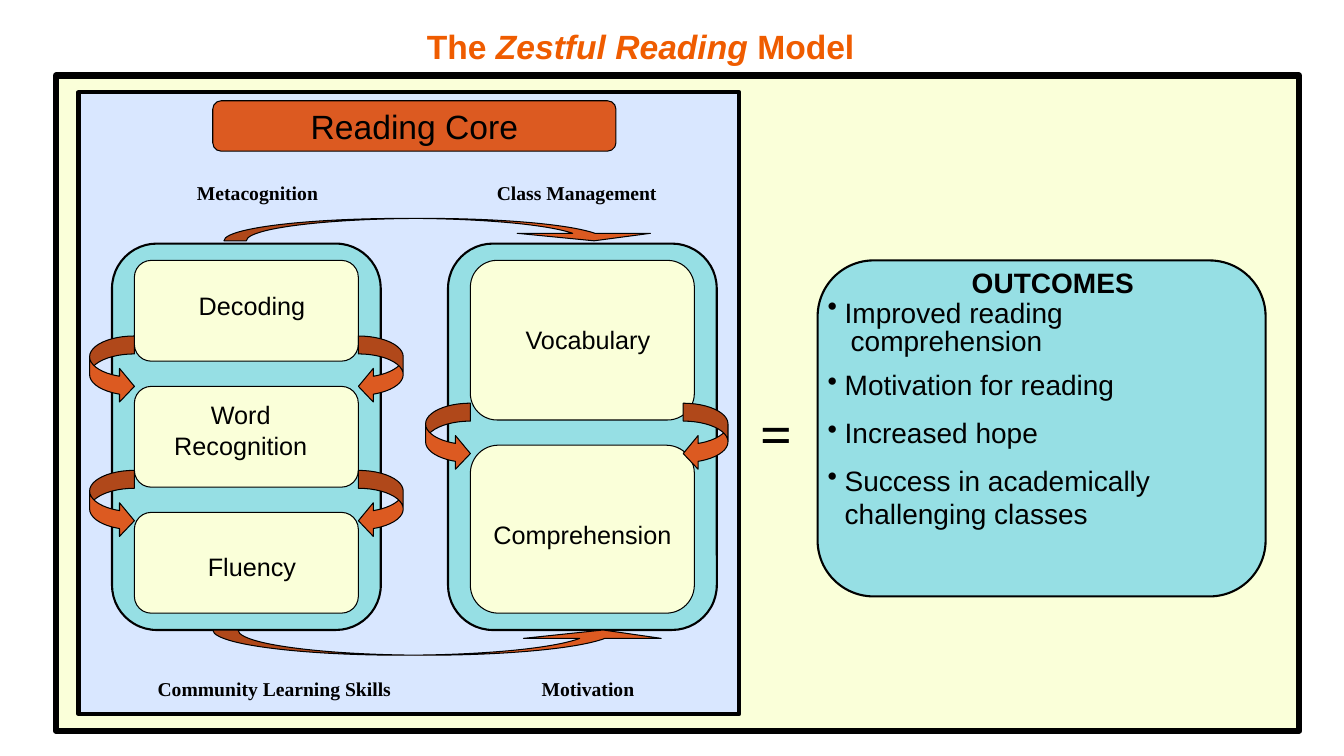
"""Draw the reading model slide on a grid of 120 columns by 90 rows."""
import lxml.etree
import pptx
import pptx.dml.color
import pptx.enum.shapes
import pptx.enum.text
import pptx.oxml.ns
import pptx.util

HUES = {"black": "000000", "cream": "FAFFD9", "sky": "D9E7FF",
        "teal": "96DFE4", "rust": "DC5A21", "flame": "EF5C00"}
KIND = pptx.enum.shapes.MSO_SHAPE
ALIGN = pptx.enum.text.PP_ALIGN
ANCHOR = pptx.enum.text.MSO_ANCHOR


class Board:
    def __init__(self, deck):
        self.slide = deck.slides.add_slide(deck.slide_layouts[6])
        self.col = deck.slide_width / 120
        self.row = deck.slide_height / 90

    def place(self, x, y, w, h):
        return [round(v) for v in (x * self.col, y * self.row, w * self.col, h * self.row)]

    def hue(self, name):
        return pptx.dml.color.RGBColor.from_string(HUES[name])

    def shape(self, kind, area, fill, line=0.75, bends=()):
        item = self.slide.shapes.add_shape(kind, *self.place(*area))
        item.shadow.inherit = False
        item.fill.solid()
        item.fill.fore_color.rgb = self.hue(fill)
        item.line.color.rgb = self.hue("black")
        item.line.width = pptx.util.Pt(line)
        for spot, bend in enumerate(bends):
            item.adjustments[spot] = bend

    def panel(self, area, fill, line=0.75):
        self.shape(KIND.ROUNDED_RECTANGLE, area, fill, line, [0.167])

    def frame(self, area, anchor=ANCHOR.TOP):
        frame = self.slide.shapes.add_textbox(*self.place(*area)).text_frame
        frame.word_wrap = True
        frame.vertical_anchor = anchor
        return frame

    def style(self, para, size, face="Arial", bold=False, hue="black", align=ALIGN.CENTER):
        para.alignment = align
        para.font.size = pptx.util.Pt(size)
        para.font.name = face
        para.font.bold = bold
        para.font.color.rgb = self.hue(hue)

    def text(self, area, words, size, **look):
        para = self.frame(area).paragraphs[0]
        para.text = words
        self.style(para, size, **look)

    def title(self, area, parts):
        para = self.frame(area, ANCHOR.MIDDLE).paragraphs[0]
        for words, slant in parts:
            run = para.add_run()
            run.text = words
            run.font.italic = slant
        self.style(para, 24, bold=True, hue="flame")

    def list(self, area, head, points):
        frame = self.frame(area)
        first = frame.paragraphs[0]
        first.text = head
        self.style(first, 20, bold=True)
        for words, dot, tight in points:
            para = frame.add_paragraph()
            para.text = words
            para.space_before = pptx.util.Pt(10)
            if tight:
                para.line_spacing = 0.4
            props = para._p.get_or_add_pPr()
            props.set("marL", str(pptx.util.Inches(0.17 if dot else 0.23)))
            props.set("indent", str(pptx.util.Inches(-0.17 if dot else 0)))
            if dot:
                mark = lxml.etree.SubElement(props, pptx.oxml.ns.qn("a:buChar"))
                mark.set("char", "•")
            self.style(para, 20, align=ALIGN.LEFT)


def main():
    deck = pptx.Presentation()
    deck.slide_width = pptx.util.Inches(13.333)
    deck.slide_height = pptx.util.Inches(7.5)
    board = Board(deck)

    board.shape(KIND.RECTANGLE, (5, 9, 111, 78), "cream", 4.5)
    board.title((15.7, 3, 83, 5),
                [("The ", False), ("Zestful Reading", True), (" Model", False)])
    board.shape(KIND.RECTANGLE, (7, 11, 59, 74), "sky", 3)

    for words, x, y, w in [("Metacognition", 14, 21, 18), ("Class Management", 40, 21, 23),
                           ("Community Learning Skills", 9, 80, 31), ("Motivation", 44, 80, 17)]:
        board.text((x, y, w, 4), words, 14, face="Times New Roman", bold=True)
    board.text((67, 46.8, 7, 9.2), "=", 40, face="Times New Roman", bold=True, align=ALIGN.LEFT)

    board.panel((73, 31, 40, 40), "teal", 1.5)
    board.list((73, 31, 42, 34.5), "OUTCOMES", [
        ("Improved reading", True, True),
        ("comprehension", False, True),
        ("Motivation for reading", True, False),
        ("Increased hope", True, False),
        ("Success in academically challenging classes", True, False)])

    for x in (10, 40):
        board.panel((x, 29, 24, 46), "teal", 1.5)
    for words, x, y, h, spot in [
            ("Decoding", 12, 31, 12, (14, 34, 17, 5)),
            ("Word Recognition", 12, 46, 12, (12, 47, 19, 8.4)),
            ("Fluency", 12, 61, 12, (15, 65, 15, 5)),
            ("Vocabulary", 42, 31, 19, (43, 38, 19, 5)),
            ("Comprehension", 42, 53, 20, (40, 61.2, 24, 5))]:
        board.panel((x, y, 20, h), "cream")
        board.text(spot, words, 18)

    for left, right, y in [(8, 32, 40), (8, 32, 56), (38, 61, 48)]:
        for kind, x in [(KIND.CURVED_RIGHT_ARROW, left), (KIND.CURVED_LEFT_ARROW, right)]:
            board.shape(kind, (x, y, 4, 8), "rust", bends=(0.4, 0.8, 0.333))
    board.shape(KIND.CURVED_UP_ARROW, (19, 75, 41, 3), "rust", bends=(2.733, 5.467, 0.333))
    board.shape(KIND.CURVED_DOWN_ARROW, (20, 26, 39, 2.67), "rust", bends=(2.971, 5.943, 0.333))

    board.panel((19, 12, 36, 6), "rust")
    board.text((23, 12, 28, 6), "Reading Core", 24)
    deck.save("out.pptx")


if __name__ == "__main__":
    main()
